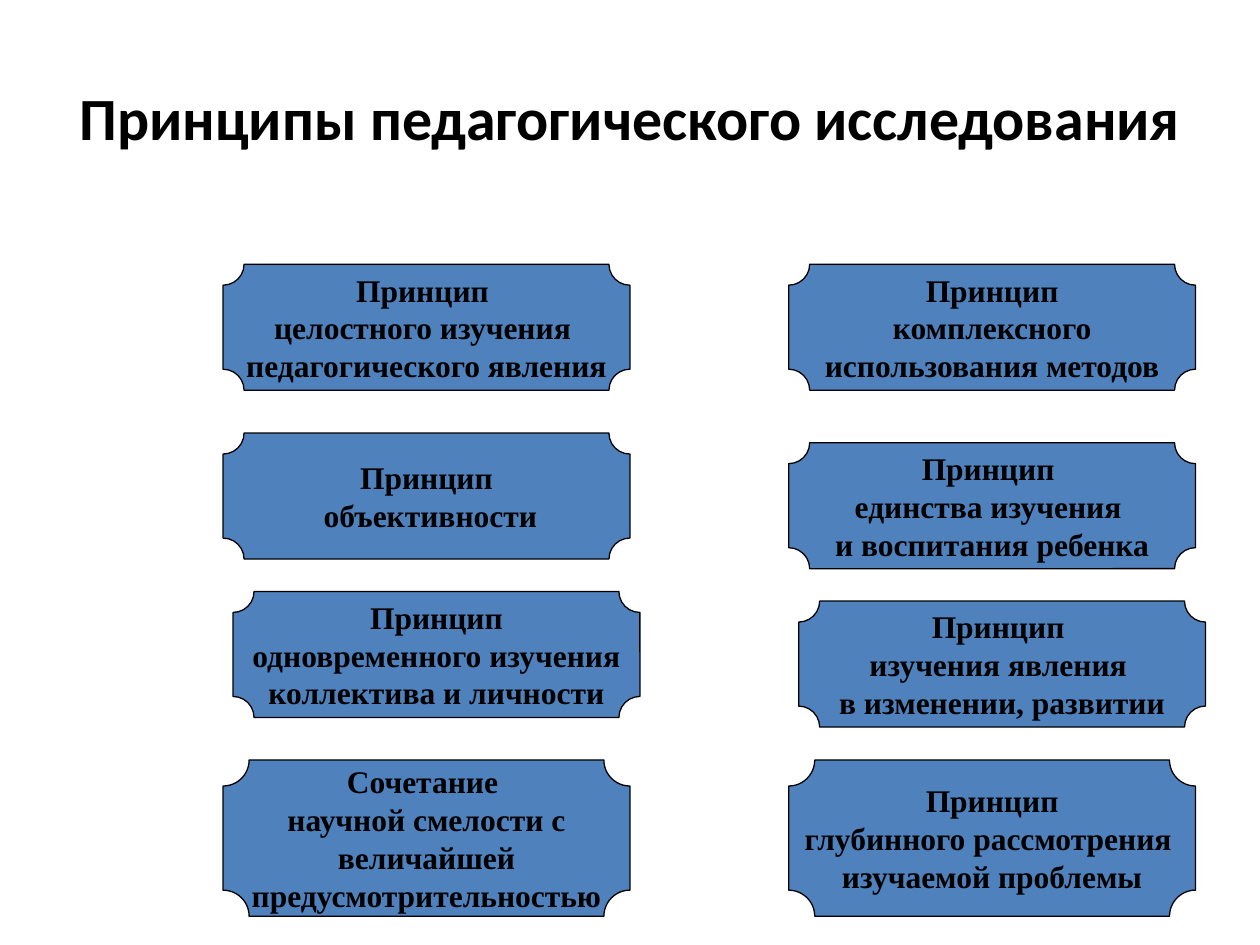
from dataclasses import dataclass
from pptx import Presentation
from pptx.dml.color import RGBColor
from pptx.enum.shapes import MSO_SHAPE
from pptx.enum.text import MSO_ANCHOR, PP_ALIGN
from pptx.util import Pt

PLAQUE = MSO_SHAPE.PLAQUE
MIDDLE = MSO_ANCHOR.MIDDLE
CENTER = PP_ALIGN.CENTER


@dataclass
class Theme:
    ink: RGBColor = RGBColor(0, 0, 0)
    fill: RGBColor = RGBColor(0x4F, 0x81, 0xBD)
    head: float = 34.2
    body: float = 18
    sans: str = "Calibri"
    serif: str = "Times New Roman"


theme = Theme()


def write(shape, lines, font, size, wrap):
    frame = shape.text_frame
    frame.word_wrap = wrap
    frame.vertical_anchor = MIDDLE
    for i, line in enumerate(lines):
        para = frame.paragraphs[0] if i == 0 else frame.add_paragraph()
        para.alignment = CENTER
        run = para.add_run()
        run.text = line
        run.font.name = font
        run.font.size = Pt(size)
        run.font.bold = True
        run.font.color.rgb = theme.ink


deck = Presentation()
deck.slide_width, deck.slide_height = Pt(720), Pt(540)
slide = deck.slides.add_slide(deck.slide_layouts[6])

title = slide.shapes.add_textbox(Pt(36), Pt(21.6), Pt(648), Pt(90))
write(title, ["Принципы педагогического исследования"],
      theme.sans, theme.head, True)

LEFT, PITCH, WIDTH = 127.5, 323.2, 232.5

rows = [
    (0, 72, [
        (151, ["Принцип ", "целостного изучения ", "педагогического явления"]),
        (151, ["Принцип", " комплексного ", "использования методов"]),
    ]),
    (0, 72, [
        (247.5, ["Принцип", " объективности"]),
        (253, ["Принцип ", "единства изучения ", "и воспитания ребенка"]),
    ]),
    (5.7, 72, [
        (338, ["Принцип", " одновременного изучения ", "коллектива и личности"]),
        (343.5, ["Принцип ", "изучения явления ", "в изменении, развитии"]),
    ]),
    (0, 89.3, [
        (434.3, ["Сочетание ", "научной смелости с", " величайшей ",
                 "предусмотрительностью"]),
        (434.3, ["Принцип", "глубинного рассмотрения ", "изучаемой проблемы"]),
    ]),
]

for shift, height, cards in rows:
    for col, (top, lines) in enumerate(cards):
        left = LEFT + shift + col * PITCH
        card = slide.shapes.add_shape(
            PLAQUE, Pt(left), Pt(top), Pt(WIDTH), Pt(height))
        card.shadow.inherit = False
        card.fill.solid()
        card.fill.fore_color.rgb = theme.fill
        card.line.color.rgb = theme.ink
        card.line.width = Pt(0.75)
        write(card, lines, theme.serif, theme.body, False)

deck.save("out.pptx")
